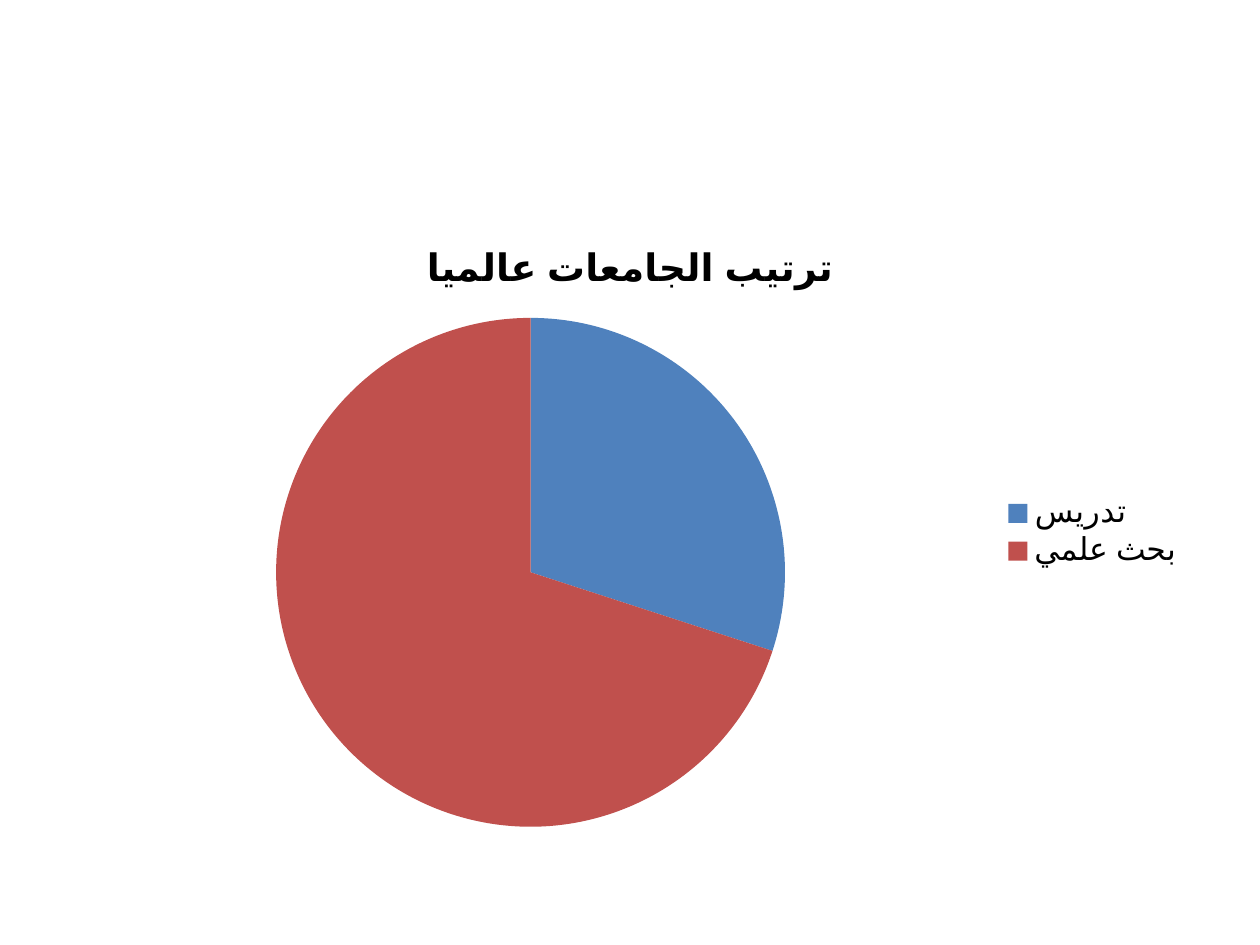
from dataclasses import dataclass

from pptx import Presentation
from pptx.chart.data import CategoryChartData
from pptx.dml.color import RGBColor as RGB
from pptx.enum.chart import XL_CHART_TYPE as ChartType, XL_LEGEND_POSITION as LegendPos
from pptx.util import Inches, Pt


@dataclass(frozen=True)
class Theme:
    font: str = "Calibri"
    text: str = "000000"
    slices: tuple = ("4F81BD", "C0504D")
    title_size: float = 21.6
    body_size: float = 18


def format_font(font, *, name, size, color, bold=False):
    font.name = name
    font.size = Pt(size)
    font.bold = bold
    font.color.rgb = RGB.from_string(color)


def write_text(tf, text, **fmt):
    p = tf.paragraphs[0]
    r = p.add_run()
    r.text = text
    format_font(r.font, **fmt)


class SlideBuilder:
    def __init__(self, slide, theme):
        self.slide = slide
        self.theme = theme

    def pie(self, title, shares, left, top, width, height):
        """Add a titled pie chart with its legend on the right."""
        t = self.theme
        data = CategoryChartData()
        data.categories = list(shares)
        data.add_series(title, list(shares.values()))
        chart = self.slide.shapes.add_chart(
            ChartType.PIE, Inches(left), Inches(top), Inches(width), Inches(height), data
        ).chart
        format_font(chart.font, name=t.font, size=t.body_size, color=t.text)

        chart.has_title = True
        write_text(chart.chart_title.text_frame, title,
                   name=t.font, size=t.title_size, color=t.text, bold=True)
        chart.chart_title.include_in_layout = False

        chart.has_legend = True
        chart.legend.position = LegendPos.RIGHT
        chart.legend.include_in_layout = False

        plot = chart.plots[0]
        plot.vary_by_categories = True
        for i, color in enumerate(t.slices):
            fill = plot.series[0].points[i].format.fill
            fill.solid()
            fill.fore_color.rgb = RGB.from_string(color)


def main():
    prs = Presentation()
    prs.slide_width, prs.slide_height = Inches(10), Inches(7.5)
    s = SlideBuilder(prs.slides.add_slide(prs.slide_layouts[6]), Theme())
    s.pie("ترتيب الجامعات عالميا", {"تدريس": 30, "بحث علمي": 70},
          left=0.5, top=1.75, width=9, height=4.95)
    prs.save("out.pptx")


if __name__ == "__main__":
    main()
